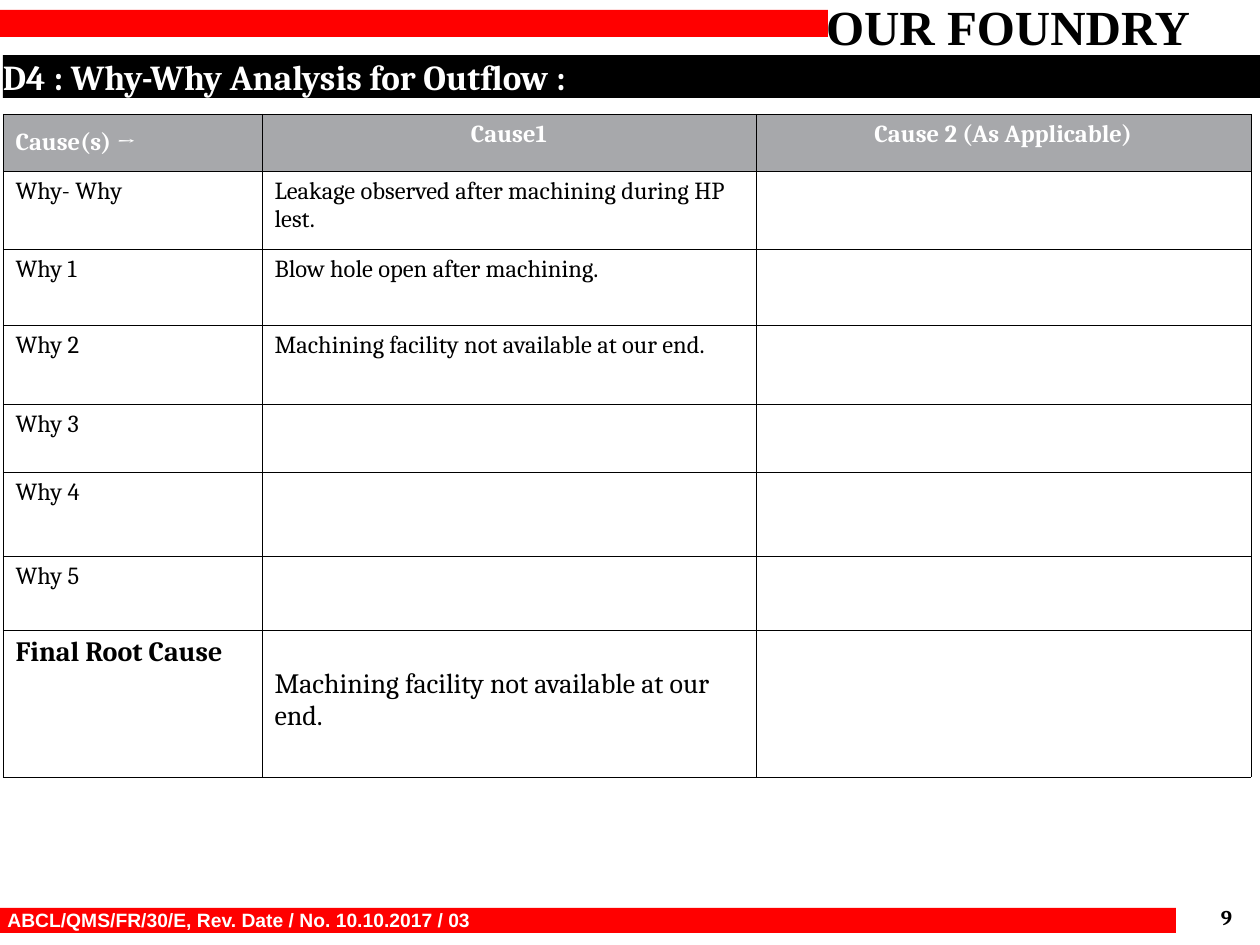
from lxml.etree import SubElement
from pptx import Presentation
from pptx.dml.color import RGBColor
from pptx.enum.shapes import MSO_SHAPE
from pptx.enum.text import MSO_ANCHOR, MSO_AUTO_SIZE, PP_ALIGN
from pptx.oxml.ns import qn
from pptx.util import Pt

# Content
COMPANY = "OUR FOUNDRY"
TITLE = "D4 : Why-Why Analysis for Outflow :"
FORM_NO = "ABCL/QMS/FR/30/E, Rev. Date / No. 10.10.2017 / 03"
PAGE = "9"
NO_FACILITY = "Machining facility not available at our end."
ROWS = [
    ("Cause(s) →", "Cause1", "Cause 2 (As Applicable)"),
    ("Why- Why", "Leakage observed after machining during HP lest.", ""),
    ("Why 1", "Blow hole open after machining.", ""),
    ("Why 2", NO_FACILITY, ""),
    ("Why 3", "", ""),
    ("Why 4", "", ""),
    ("Why 5", "", ""),
    ("Final Root Cause", NO_FACILITY, ""),
]
COL_WIDTHS = [259, 494, 495]
ROW_HEIGHTS = [57, 78, 76, 79, 68, 84, 74, 147]

BLACK = RGBColor(0, 0, 0)
WHITE = RGBColor(255, 255, 255)
RED = RGBColor(255, 0, 0)
GREY = RGBColor(0xA7, 0xA8, 0xAB)
BODY_FONT = "Cambria"


def px(n):
    return round(n * 914400 / 126)


def write(tf, text, size, font=BODY_FONT, color=BLACK, bold=True, align=PP_ALIGN.LEFT):
    p = tf.paragraphs[0]
    p.alignment = align
    r = p.add_run()
    r.text = text
    r.font.size, r.font.name, r.font.bold = Pt(size), font, bold
    r.font.color.rgb = color


def no_margins(tf):
    tf.margin_left = tf.margin_right = tf.margin_top = tf.margin_bottom = 0


def add_bar(left, top, width, height):
    s = slide.shapes.add_shape(MSO_SHAPE.RECTANGLE, px(left), px(top), px(width), px(height))
    s.shadow.inherit = False
    s.fill.solid()
    s.fill.fore_color.rgb = RED
    s.line.fill.background()


def add_text(left, top, width, height, text, size, **style):
    tf = slide.shapes.add_textbox(px(left), px(top), px(width), px(height)).text_frame
    tf.word_wrap = True
    write(tf, text, size, **style)
    return tf


def set_borders(cell):
    tcPr = cell._tc.get_or_add_tcPr()
    for i, side in enumerate(("a:lnL", "a:lnR", "a:lnT", "a:lnB")):
        ln = tcPr.makeelement(qn(side), {"w": str(Pt(0.25))})
        fill = SubElement(ln, qn("a:solidFill"))
        SubElement(fill, qn("a:srgbClr"), val=str(BLACK))
        tcPr.insert(i, ln)


prs = Presentation()
prs.slide_width, prs.slide_height = px(1260), px(945)
slide = prs.slides.add_slide(prs.slide_layouts[5])

# Header and footer
add_text(798, -10, 420, 73, COMPANY, 28, font="Times New Roman", align=PP_ALIGN.CENTER)
add_bar(-1, 10, 829, 27)
add_bar(0, 908, 1176, 25)
add_text(-5, 902, 1133, 37, FORM_NO, 11, font="Arial", color=WHITE)
no_margins(add_text(1164, 905, 68, 25, PAGE, 12, align=PP_ALIGN.RIGHT))

# Title band
title = slide.shapes.title
title.left, title.top, title.width, title.height = px(3), px(55), px(1257), px(43)
title.fill.solid()
title.fill.fore_color.rgb = BLACK
tf = title.text_frame
no_margins(tf)
tf.auto_size = MSO_AUTO_SIZE.NONE
tf.vertical_anchor = MSO_ANCHOR.MIDDLE
write(tf, TITLE, 20, color=WHITE)

# Why-why table
table = slide.shapes.add_table(
    len(ROWS), len(COL_WIDTHS), px(3), px(114), px(sum(COL_WIDTHS)), px(sum(ROW_HEIGHTS))
).table
table.horz_banding = False
for column, width in zip(table.columns, COL_WIDTHS):
    column.width = px(width)
for i, (row, height, texts) in enumerate(zip(table.rows, ROW_HEIGHTS, ROWS)):
    row.height = px(height)
    header, root_cause = i == 0, i == len(ROWS) - 1
    for j, (cell, text) in enumerate(zip(row.cells, texts)):
        if header:
            cell.fill.solid()
            cell.fill.fore_color.rgb = GREY
        else:
            cell.fill.background()
        set_borders(cell)
        if header and j == 0:
            cell.vertical_anchor = MSO_ANCHOR.MIDDLE
        if root_cause and j == 1:
            cell.margin_top = px(38)
        if text:
            write(cell.text_frame, text, 16 if root_cause else 14,
                  color=WHITE if header else BLACK,
                  bold=header or (root_cause and j == 0),
                  align=PP_ALIGN.CENTER if header and j else PP_ALIGN.LEFT)

prs.save("out.pptx")
